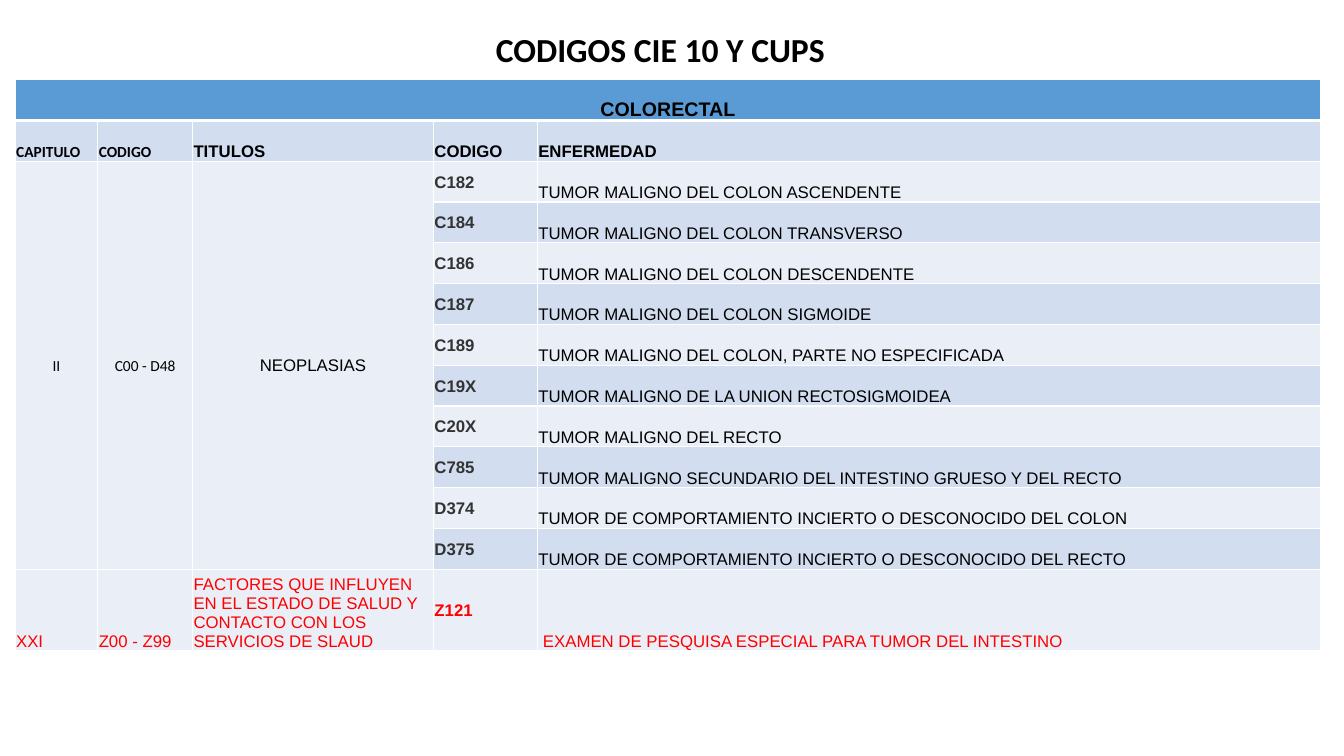
from pptx import Presentation
from pptx.dml.color import RGBColor
from pptx.enum.text import MSO_ANCHOR, PP_ALIGN
from pptx.oxml import parse_xml
from pptx.oxml.ns import nsdecls
from pptx.util import Inches, Pt

LEFT, CENTER, JUSTIFY = PP_ALIGN.LEFT, PP_ALIGN.CENTER, PP_ALIGN.JUSTIFY
MIDDLE, BOTTOM = MSO_ANCHOR.MIDDLE, MSO_ANCHOR.BOTTOM
BLACK, GRAY, RED, WHITE = "000000", "333333", "FF0000", "FFFFFF"
BLUE, PALE, LIGHT = "5B9BD5", "D2DEEF", "EAEFF7"
WIDTHS = [0.82, 0.94, 2.39, 1.03, 7.77]
ROW = 0.405
HEADS = ["CAPITULO", "CODIGO", "TITULOS", "CODIGO", "ENFERMEDAD"]
CODES = [
    ("C182", "TUMOR MALIGNO DEL COLON ASCENDENTE"),
    ("C184", "TUMOR MALIGNO DEL COLON TRANSVERSO"),
    ("C186", "TUMOR MALIGNO DEL COLON DESCENDENTE"),
    ("C187", "TUMOR MALIGNO DEL COLON SIGMOIDE"),
    ("C189", "TUMOR MALIGNO DEL COLON, PARTE NO ESPECIFICADA"),
    ("C19X", "TUMOR MALIGNO DE LA UNION RECTOSIGMOIDEA"),
    ("C20X", "TUMOR MALIGNO DEL RECTO"),
    ("C785", "TUMOR MALIGNO SECUNDARIO DEL INTESTINO GRUESO Y DEL RECTO"),
    ("D374", "TUMOR DE COMPORTAMIENTO INCIERTO O DESCONOCIDO DEL COLON"),
    ("D375", "TUMOR DE COMPORTAMIENTO INCIERTO O DESCONOCIDO DEL RECTO"),
]
GROUP = ["II", "C00 - D48", "NEOPLASIAS"]
EXAM = [
    "XXI",
    "Z00 - Z99",
    "FACTORES QUE INFLUYEN EN EL ESTADO DE SALUD Y CONTACTO CON LOS SERVICIOS DE SLAUD",
    "Z121",
    " EXAMEN DE PESQUISA ESPECIAL PARA TUMOR DEL INTESTINO",
]


def paint(color, code):
    color.rgb = RGBColor.from_string(code)


def write(frame, text, size=12, font="Arial", color=BLACK, bold=False, align=LEFT):
    para = frame.paragraphs[0]
    para.alignment = align
    run = para.add_run()
    run.text = text
    run.font.size = Pt(size)
    run.font.name = font
    run.font.bold = bold
    paint(run.font.color, color)


def add_title(slide, text):
    box = slide.shapes.add_textbox(Inches(1.45), Inches(0.24), Inches(10.2), Inches(0.5))
    box.text_frame.word_wrap = True
    write(box.text_frame, text, 24, "Calibri", bold=True, align=CENTER)


def add_edges(cell, top, bottom):
    props = cell._tc.get_or_add_tcPr()
    edges = [("lnL", 1), ("lnR", 1), ("lnT", top), ("lnB", bottom)]
    for place, (tag, width) in enumerate(edges):
        props.insert(place, parse_xml(
            f'<a:{tag} {nsdecls("a")} w="{Pt(width)}"><a:solidFill>'
            f'<a:srgbClr val="{WHITE}"/></a:solidFill></a:{tag}>'))


def style(cell, fill, top=1, bottom=1):
    cell.fill.solid()
    paint(cell.fill.fore_color, fill)
    cell.margin_left = cell.margin_right = cell.margin_top = Inches(0.01)
    cell.margin_bottom = 0
    cell.vertical_anchor = BOTTOM
    add_edges(cell, top, bottom)


def add_grid(slide):
    count = len(CODES) + 3
    shape = slide.shapes.add_table(
        count, len(WIDTHS), Inches(0.15), Inches(0.79),
        Inches(sum(WIDTHS)), Inches(ROW * (count + 1)))
    table = shape.table
    for col, width in zip(table.columns, WIDTHS):
        col.width = Inches(width)
    for index, row in enumerate(table.rows):
        row.height = Inches(ROW * 2 if index == count - 1 else ROW)
        band = BLUE if index == 0 else PALE if index % 2 else LIGHT
        for place, cell in enumerate(row.cells):
            fill = LIGHT if index > 1 and place < 3 or index == count - 1 else band
            style(cell, fill, 3 if index == 1 else 1, 3 if index == 0 else 1)
    return table


def fill_heads(table):
    top = table.cell(0, 0)
    top.merge(table.cell(0, len(WIDTHS) - 1))
    write(top.text_frame, "COLORECTAL", 14, bold=True, align=CENTER)
    for col, text in enumerate(HEADS):
        size, font = (11, "Calibri") if col < 2 else (12, "Arial")
        write(table.cell(1, col).text_frame, text, size, font, bold=True)


def fill_group(table):
    for col, text in enumerate(GROUP):
        cell = table.cell(2, col)
        cell.merge(table.cell(len(CODES) + 1, col))
        cell.vertical_anchor = MIDDLE
        size, font = (11, "Calibri") if col < 2 else (12, "Arial")
        write(cell.text_frame, text, size, font, align=CENTER)


def add_code(cell, text, color):
    cell.vertical_anchor = MIDDLE
    write(cell.text_frame, text, color=color, bold=True, align=JUSTIFY)


def fill_codes(table):
    for row, (code, name) in enumerate(CODES, 2):
        add_code(table.cell(row, 3), code, GRAY)
        write(table.cell(row, 4).text_frame, name)


def fill_exam(table):
    row = len(CODES) + 2
    for col, text in enumerate(EXAM):
        cell = table.cell(row, col)
        if col == 3:
            add_code(cell, text, RED)
        else:
            write(cell.text_frame, text, color=RED)


def main():
    deck = Presentation()
    deck.slide_width, deck.slide_height = Inches(13.33), Inches(7.5)
    slide = deck.slides.add_slide(deck.slide_layouts[6])
    add_title(slide, "CODIGOS CIE 10 Y CUPS")
    table = add_grid(slide)
    fill_heads(table)
    fill_group(table)
    fill_codes(table)
    fill_exam(table)
    deck.save("out.pptx")


if __name__ == "__main__":
    main()
